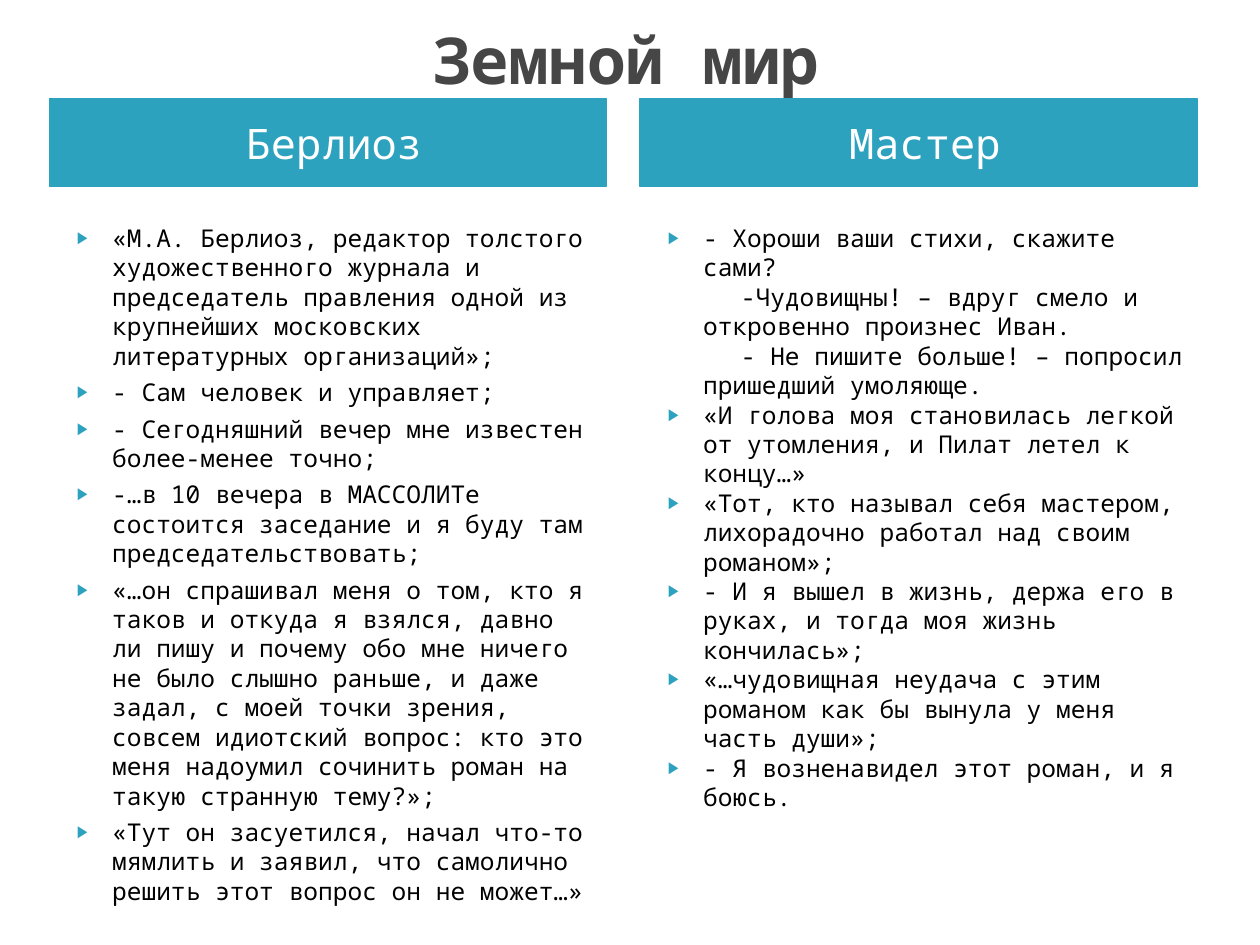
import pptx
import pptx.dml.color
import pptx.enum.text
import pptx.oxml
import pptx.oxml.ns
import pptx.util

Inches = pptx.util.Inches
Pt = pptx.util.Pt
RGBColor = pptx.dml.color.RGBColor
Align = pptx.enum.text.PP_ALIGN
Anchor = pptx.enum.text.MSO_ANCHOR

FONT = "Noto Sans Mono"
TEAL = RGBColor(0x2D, 0xA2, 0xBF)
GRAY = RGBColor(0x46, 0x46, 0x46)
WHITE = RGBColor(0xFF, 0xFF, 0xFF)
BLACK = RGBColor(0, 0, 0)

COMPARISON_LAYOUT = 4
COLUMN_LEFT, COLUMN_STEP, COLUMN_WIDTH = 0.39, 4.69, 4.42
HEADING_TOP, HEADING_HEIGHT = 0.78, 0.7
LIST_TOP, LIST_HEIGHT = 1.72, 5.56
TEXT_INDENT, BULLET_HANG, SPEECH_INDENT = 0.4, -0.28, 0.3

BERLIOZ = [
    "«М.А. Берлиоз, редактор толстого художественного журнала и председатель "
    "правления одной из крупнейших московских литературных организаций»;",
    "- Сам человек и управляет;",
    "- Сегодняшний вечер мне известен более-менее точно;",
    "-…в 10 вечера в МАССОЛИТе состоится заседание и я буду там председательствовать;",
    "«…он спрашивал меня о том, кто я таков и откуда я взялся, давно ли пишу и почему "
    "обо мне ничего не было слышно раньше, и даже задал, с моей точки зрения, совсем "
    "идиотский вопрос: кто это меня надоумил сочинить роман на такую странную тему?»;",
    "«Тут он засуетился, начал что-то мямлить и заявил, что самолично решить этот "
    "вопрос он не может…»",
]
MASTER = [
    "- Хороши ваши стихи, скажите сами?",
    "-Чудовищны! – вдруг смело и откровенно произнес Иван.",
    "- Не пишите больше! – попросил пришедший умоляюще.",
    "«И голова моя становилась легкой от утомления, и Пилат летел к концу…»",
    "«Тот, кто называл себя мастером, лихорадочно работал над своим романом»;",
    "- И я вышел в жизнь, держа его в руках, и тогда моя жизнь кончилась»;",
    "«…чудовищная неудача с этим романом как бы вынула у меня часть души»;",
    "- Я возненавидел этот роман, и я боюсь.",
]
MASTER_SPEECH = (1, 2)  # replies that continue the first quotation, without bullets


def place(shape, left, top, width, height, anchor):
    shape.left, shape.top = Inches(left), Inches(top)
    shape.width, shape.height = Inches(width), Inches(height)
    frame = shape.text_frame
    frame.word_wrap = True
    frame.auto_size = pptx.enum.text.MSO_AUTO_SIZE.NONE
    frame.vertical_anchor = anchor


def set_bullet(paragraph, bulleted):
    properties = paragraph._p.get_or_add_pPr()
    first_line = BULLET_HANG if bulleted else SPEECH_INDENT
    properties.set("marL", str(Inches(TEXT_INDENT)))
    properties.set("indent", str(Inches(first_line)))
    namespace = pptx.oxml.ns.nsdecls("a")
    if bulleted:
        elements = [
            f'<a:buClr {namespace}><a:srgbClr val="{TEAL}"/></a:buClr>',
            f'<a:buSzPct {namespace} val="68000"/>',
            f'<a:buChar {namespace} char="▶"/>',
        ]
    else:
        elements = [f"<a:buNone {namespace}/>"]
    for element in elements:
        properties.append(pptx.oxml.parse_xml(element))


def write(paragraph, text, *, size, color, bold=False, align=Align.LEFT, before=0):
    paragraph.alignment = align
    paragraph.space_before = Pt(before)
    run = paragraph.add_run()
    run.text = text
    font = run.font
    font.name, font.size, font.bold = FONT, Pt(size), bold
    font.color.rgb = color


def fill_heading(shape, left, text):
    place(shape, left, HEADING_TOP, COLUMN_WIDTH, HEADING_HEIGHT, Anchor.MIDDLE)
    shape.text_frame.margin_left = Inches(0.2)
    shape.fill.solid()
    shape.fill.fore_color.rgb = TEAL
    shape.line.color.rgb = TEAL
    shape.line.width = Pt(0.75)
    write(shape.text_frame.paragraphs[0], text, size=24, color=WHITE, align=Align.CENTER)


def fill_list(shape, left, items, gap, speech):
    place(shape, left, LIST_TOP, COLUMN_WIDTH, LIST_HEIGHT, Anchor.TOP)
    frame = shape.text_frame
    for index, item in enumerate(items):
        paragraph = frame.add_paragraph() if index else frame.paragraphs[0]
        set_bullet(paragraph, index not in speech)
        write(paragraph, item, size=14, color=BLACK, before=gap if index else 0)


def main():
    presentation = pptx.Presentation()
    presentation.slide_width, presentation.slide_height = Inches(10), Inches(7.5)
    layout = presentation.slide_layouts[COMPARISON_LAYOUT]
    slide = presentation.slides.add_slide(layout)
    title, *bodies = slide.placeholders

    place(title, 0.47, 0.23, 9, 0.47, Anchor.MIDDLE)
    write(title.text_frame.paragraphs[0], "Земной мир", size=36.9, color=GRAY,
          bold=True, align=Align.CENTER)

    columns = [("Берлиоз", BERLIOZ, 4, ()), ("Мастер", MASTER, 0, MASTER_SPEECH)]
    for index, (heading, items, gap, speech) in enumerate(columns):
        left = COLUMN_LEFT + index * COLUMN_STEP
        fill_heading(bodies[2 * index], left, heading)
        fill_list(bodies[2 * index + 1], left, items, gap, speech)

    presentation.save("out.pptx")


if __name__ == "__main__":
    main()
